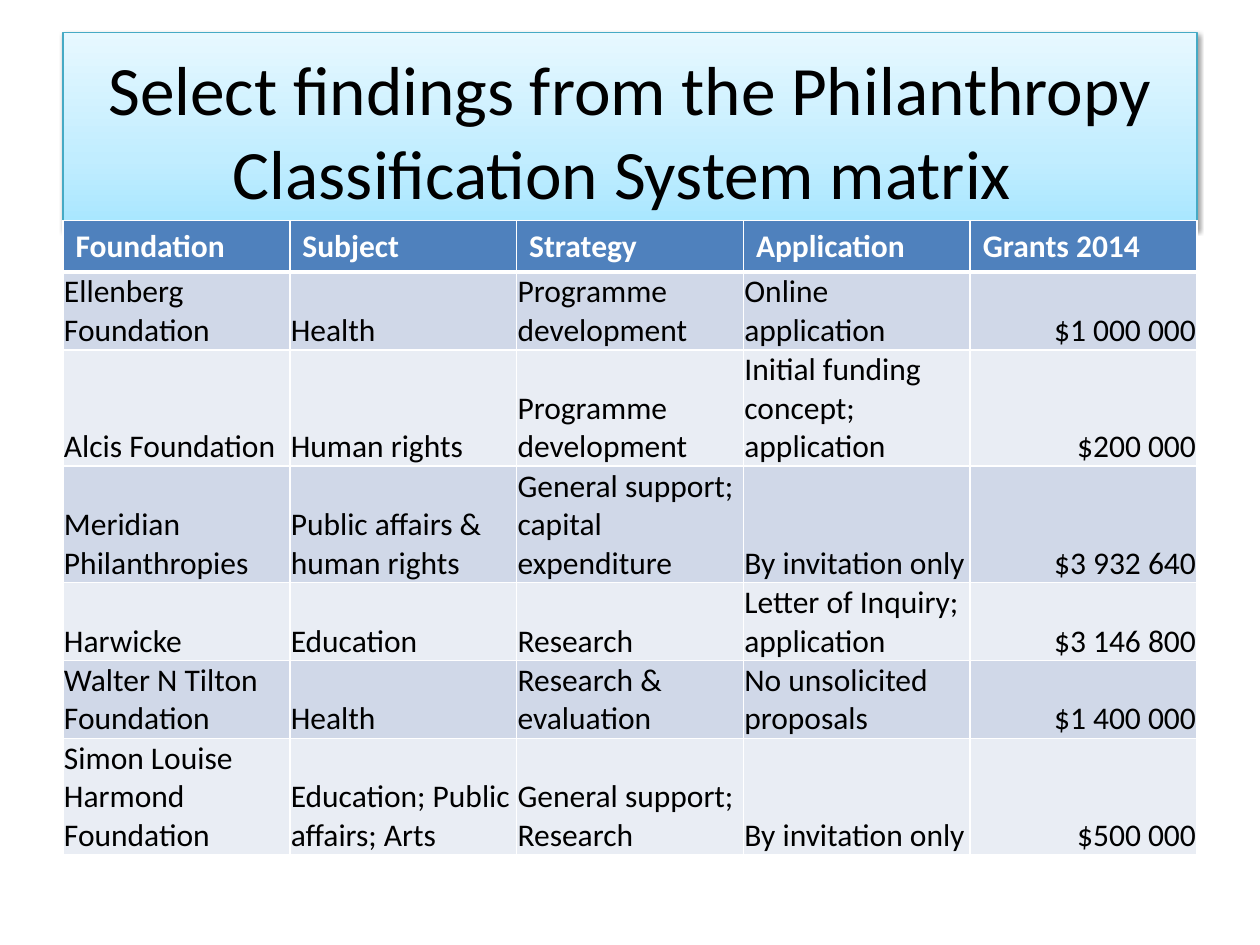
from lxml.etree import SubElement
from pptx import Presentation
from pptx.dml.color import RGBColor
from pptx.enum.text import MSO_ANCHOR, MSO_AUTO_SIZE, PP_ALIGN
from pptx.oxml import parse_xml
from pptx.oxml.ns import nsdecls, qn
from pptx.util import Cm, Pt

COLOURS = {
    "title_low": "A7E6FF",
    "title_middle": "C1EDFF",
    "title_high": "E7F8FF",
    "title_line": "46AAC5",
    "header": "4F81BD",
    "odd_row": "D0D8E8",
    "even_row": "E9EDF4",
    "white": "FFFFFF",
    "black": "000000",
}
TITLE = "Select findings from the Philanthropy Classification System matrix "
HEADINGS = ["Foundation", "Subject", "Strategy", "Application", "Grants 2014"]
FINDINGS = [
    ["Ellenberg Foundation", "Health", "Programme development",
     "Online application", "$1 000 000"],
    ["Alcis Foundation", "Human rights", "Programme development",
     "Initial funding concept; application", "$200 000"],
    ["Meridian Philanthropies", "Public affairs & human rights",
     "General support; capital expenditure", "By invitation only", "$3 932 640"],
    ["Harwicke", "Education", "Research",
     "Letter of Inquiry; application", "$3 146 800"],
    ["Walter N Tilton Foundation", "Health", "Research & evaluation",
     "No unsolicited proposals", "$1 400 000"],
    ["Simon Louise Harmond Foundation", "Education; Public affairs; Arts",
     "General support; Research", "By invitation only", "$500 000"],
]
LEFT, WIDTH = Cm(1.27), Cm(22.86)
BODY_CELL = {
    "vertical_anchor": MSO_ANCHOR.BOTTOM,
    "margin_left": Cm(0.02),
    "margin_top": Cm(0.02),
    "margin_right": Cm(0.02),
    "margin_bottom": Cm(0),
}


def set_values(target, values):
    for name, value in values.items():
        setattr(target, name, value)


def write_text(frame, text, size, colour, bold, align):
    para = frame.paragraphs[0]
    para.alignment = align
    span = para.add_run()
    span.text = text
    set_values(span.font, {"name": "Calibri", "size": Pt(size), "bold": bold})
    span.font.color.rgb = RGBColor.from_string(COLOURS[colour])


def add_gradient(box, stops):
    marks = "".join(
        f'<a:gs pos="{place * 1000}"><a:srgbClr val="{COLOURS[colour]}"/></a:gs>'
        for place, colour in stops
    )
    box._element.spPr.append(parse_xml(
        f'<a:gradFill {nsdecls("a")} rotWithShape="1"><a:gsLst>{marks}</a:gsLst>'
        '<a:lin ang="16200000" scaled="0"/></a:gradFill>'
    ))


def add_shadow(box):
    box._element.spPr.append(parse_xml(
        f'<a:effectLst {nsdecls("a")}>'
        f'<a:outerShdw blurRad="{Pt(3.1)}" dist="{Pt(1.6)}" dir="5400000" rotWithShape="0">'
        f'<a:srgbClr val="{COLOURS["black"]}"><a:alpha val="38000"/></a:srgbClr>'
        '</a:outerShdw></a:effectLst>'
    ))


def format_title(box):
    set_values(box, {"left": LEFT, "top": Cm(0.66), "width": WIDTH, "height": Cm(3.91)})
    add_gradient(box, [(0, "title_low"), (35, "title_middle"), (100, "title_high")])
    box.line.width = Pt(0.75)
    box.line.color.rgb = RGBColor.from_string(COLOURS["title_line"])
    add_shadow(box)
    set_values(box.text_frame, {
        "word_wrap": True,
        "auto_size": MSO_AUTO_SIZE.NONE,
        "vertical_anchor": MSO_ANCHOR.MIDDLE,
    })
    write_text(box.text_frame, TITLE, 39.6, "black", False, PP_ALIGN.CENTER)


def add_borders(cell, widths):
    properties = cell._tc.get_or_add_tcPr()
    for side, width in widths.items():
        line = SubElement(properties, qn(f"a:ln{side}"), w=str(Pt(width)))
        fill = SubElement(line, qn("a:solidFill"))
        SubElement(fill, qn("a:srgbClr"), val=COLOURS["white"])


def fill_cell(cell, colour):
    cell.fill.solid()
    cell.fill.fore_color.rgb = RGBColor.from_string(COLOURS[colour])


def format_header(cell, text):
    add_borders(cell, {"L": 1, "R": 1, "T": 1, "B": 3})
    fill_cell(cell, "header")
    write_text(cell.text_frame, text, 18, "white", True, PP_ALIGN.LEFT)


def format_finding(cell, text, colour, align):
    set_values(cell, BODY_CELL)
    add_borders(cell, {"L": 1, "R": 1, "B": 1})
    fill_cell(cell, colour)
    write_text(cell.text_frame, text, 18, "black", False, align)


def add_findings(page):
    height = Cm(12.62)
    frame = page.shapes.add_table(
        len(FINDINGS) + 1, len(HEADINGS), LEFT, Cm(4.45), WIDTH, height)
    table = frame.table
    for row in table.rows:
        row.height = Cm(1.03)
    frame.height = height
    for column, heading in enumerate(HEADINGS):
        format_header(table.cell(0, column), heading)
    for row, finding in enumerate(FINDINGS, start=1):
        colour = "odd_row" if row % 2 else "even_row"
        for column, text in enumerate(finding):
            align = PP_ALIGN.RIGHT if text.startswith("$") else PP_ALIGN.LEFT
            format_finding(table.cell(row, column), text, colour, align)


def main():
    deck = Presentation()
    set_values(deck, {"slide_width": Cm(25.4), "slide_height": Cm(19.05)})
    page = deck.slides.add_slide(deck.slide_layouts[5])
    format_title(page.shapes.title)
    add_findings(page)
    deck.save("out.pptx")


if __name__ == "__main__":
    main()
